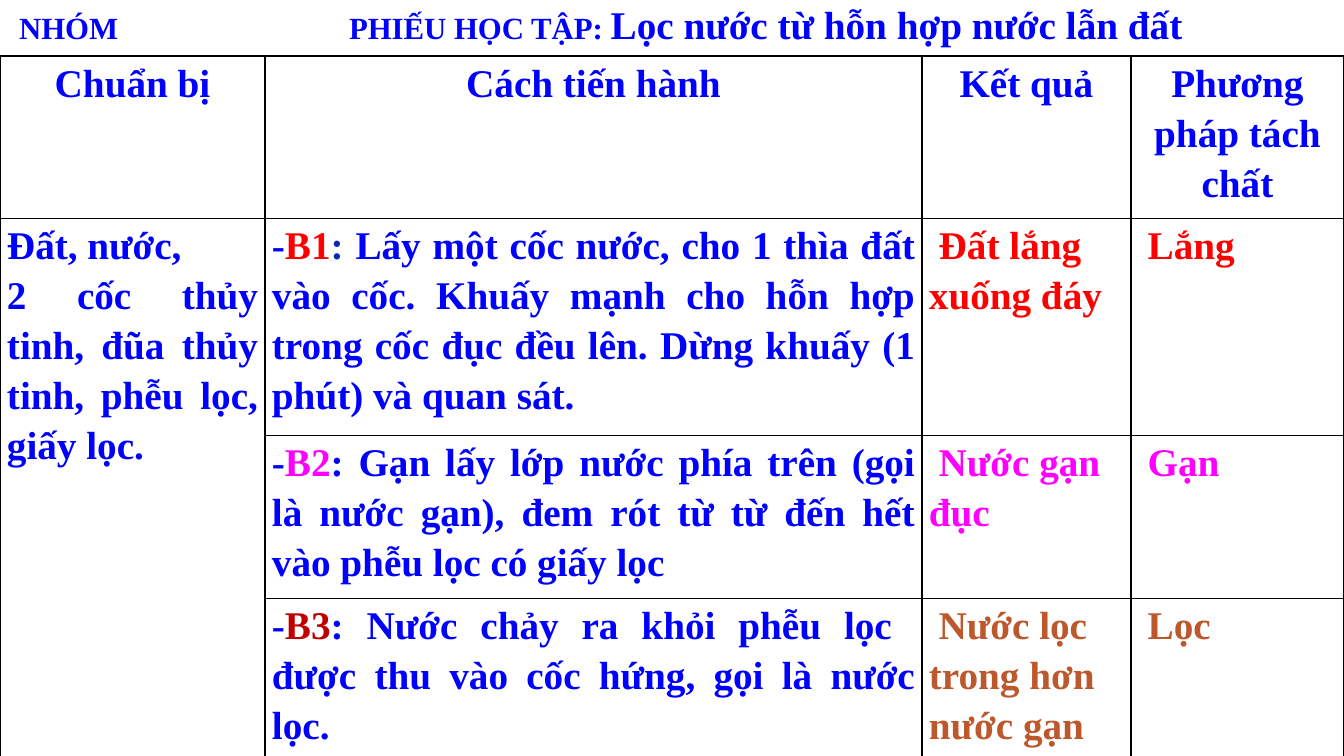
"""Build a worksheet slide about filtering water from a mixture of water and soil."""
import pptx
import pptx.dml.color
import pptx.enum.text
import pptx.oxml
import pptx.oxml.ns
import pptx.util

PX = 914400 / 100.8
BLUE = pptx.dml.color.RGBColor(0x00, 0x00, 0xFF)
NAVY = pptx.dml.color.RGBColor(0x09, 0x2A, 0xB7)
RED = pptx.dml.color.RGBColor(0xFF, 0x00, 0x00)
MAGENTA = pptx.dml.color.RGBColor(0xFF, 0x00, 0xFF)
DARK_RED = pptx.dml.color.RGBColor(0xC0, 0x00, 0x00)
BROWN = pptx.dml.color.RGBColor(0xBD, 0x58, 0x2C)
LEFT = pptx.enum.text.PP_ALIGN.LEFT
CENTER = pptx.enum.text.PP_ALIGN.CENTER
JUSTIFY = pptx.enum.text.PP_ALIGN.JUSTIFY
NAMESPACE = pptx.oxml.ns.nsdecls("a")


def px(length):
    return pptx.util.Emu(round(length * PX))


def add_span(para, text, color=BLUE, size=28):
    span = para.add_run()
    span.text = text
    span.font.name = "Times New Roman"
    span.font.size = pptx.util.Pt(size)
    span.font.bold = True
    span.font.color.rgb = color


deck = pptx.Presentation()
deck.slide_width, deck.slide_height = px(1344), px(756)
page = deck.slides.add_slide(deck.slide_layouts[5])

column_widths = [265, 657, 209, 213]
row_heights = [162, 217, 163, 181]
frame = page.shapes.add_table(4, 4, px(0), px(56), px(sum(column_widths)), px(sum(row_heights)))
table = frame.table
table.first_row = False
table.horz_banding = False
for column, width in zip(table.columns, column_widths):
    column.width = px(width)
for row, height in zip(table.rows, row_heights):
    row.height = px(height)

for cell in table.iter_cells():
    cell.margin_left = cell.margin_right = px(7)
    cell.margin_top = cell.margin_bottom = 0
    properties = cell._tc.get_or_add_tcPr()
    for side in ("lnL", "lnR", "lnT", "lnB"):
        properties.append(pptx.oxml.parse_xml(
            f'<a:{side} {NAMESPACE} w="12700"><a:solidFill><a:srgbClr val="000000"/></a:solidFill></a:{side}>'))
    cell.fill.background()
table.cell(1, 0).merge(table.cell(3, 0))

headings = ["Chuẩn bị", "Cách tiến hành", "Kết quả", "Phương pháp tách chất"]
materials = [[("Đất, nước, ", BLUE)], [("2 cốc thủy tinh, đũa thủy tinh, phễu lọc, giấy lọc.", BLUE)]]
steps = [
    ([("-", BLUE), ("B1", RED), (": ", NAVY),
      ("Lấy một cốc nước, cho 1 thìa đất vào cốc. Khuấy mạnh cho hỗn hợp trong cốc đục đều lên. "
       "Dừng khuấy (1 phút) và quan sát.", BLUE)],
     " Đất lắng xuống đáy", " Lắng", RED),
    ([("-", BLUE), ("B2", MAGENTA),
      (": Gạn lấy lớp nước phía trên (gọi là nước gạn), đem rót từ từ đến hết vào phễu lọc có giấy lọc", BLUE)],
     " Nước gạn đục", " Gạn", MAGENTA),
    ([("-", BLUE), ("B3", DARK_RED),
      (": Nước chảy ra khỏi phễu lọc  được thu vào cốc hứng, gọi là nước lọc.", BLUE)],
     " Nước lọc trong hơn nước gạn", " Lọc", BROWN),
]

entries = [(0, index, CENTER, [[(heading, BLUE)]]) for index, heading in enumerate(headings)]
entries.append((1, 0, JUSTIFY, materials))
for index, (action, result, method, color) in enumerate(steps, start=1):
    entries.append((index, 1, JUSTIFY, [action]))
    entries.append((index, 2, LEFT, [[(result, color)]]))
    entries.append((index, 3, LEFT, [[(method, color)]]))

for row_index, column_index, alignment, paragraphs in entries:
    text_frame = table.cell(row_index, column_index).text_frame
    for index, spans in enumerate(paragraphs):
        para = text_frame.add_paragraph() if index else text_frame.paragraphs[0]
        para.alignment = alignment
        para.line_spacing = 1.15
        for text, color in spans:
            add_span(para, text, color=color)

title = page.shapes.title
title.left, title.top, title.width, title.height = px(9), px(-5), px(1523), px(57)
title.text_frame.word_wrap = True
title.text_frame.auto_size = pptx.enum.text.MSO_AUTO_SIZE.SHAPE_TO_FIT_TEXT
title.text_frame.vertical_anchor = pptx.enum.text.MSO_ANCHOR.TOP
para = title.text_frame.paragraphs[0]
para.alignment = LEFT
para._p.get_or_add_pPr().append(pptx.oxml.parse_xml(
    f'<a:tabLst {NAMESPACE}><a:tab pos="{px(330)}" algn="l"/></a:tabLst>'))
add_span(para, "NHÓM\tPHIẾU HỌC TẬP: ", size=22)
add_span(para, "Lọc nước từ hỗn hợp nước lẫn đất")

deck.save("out.pptx")
